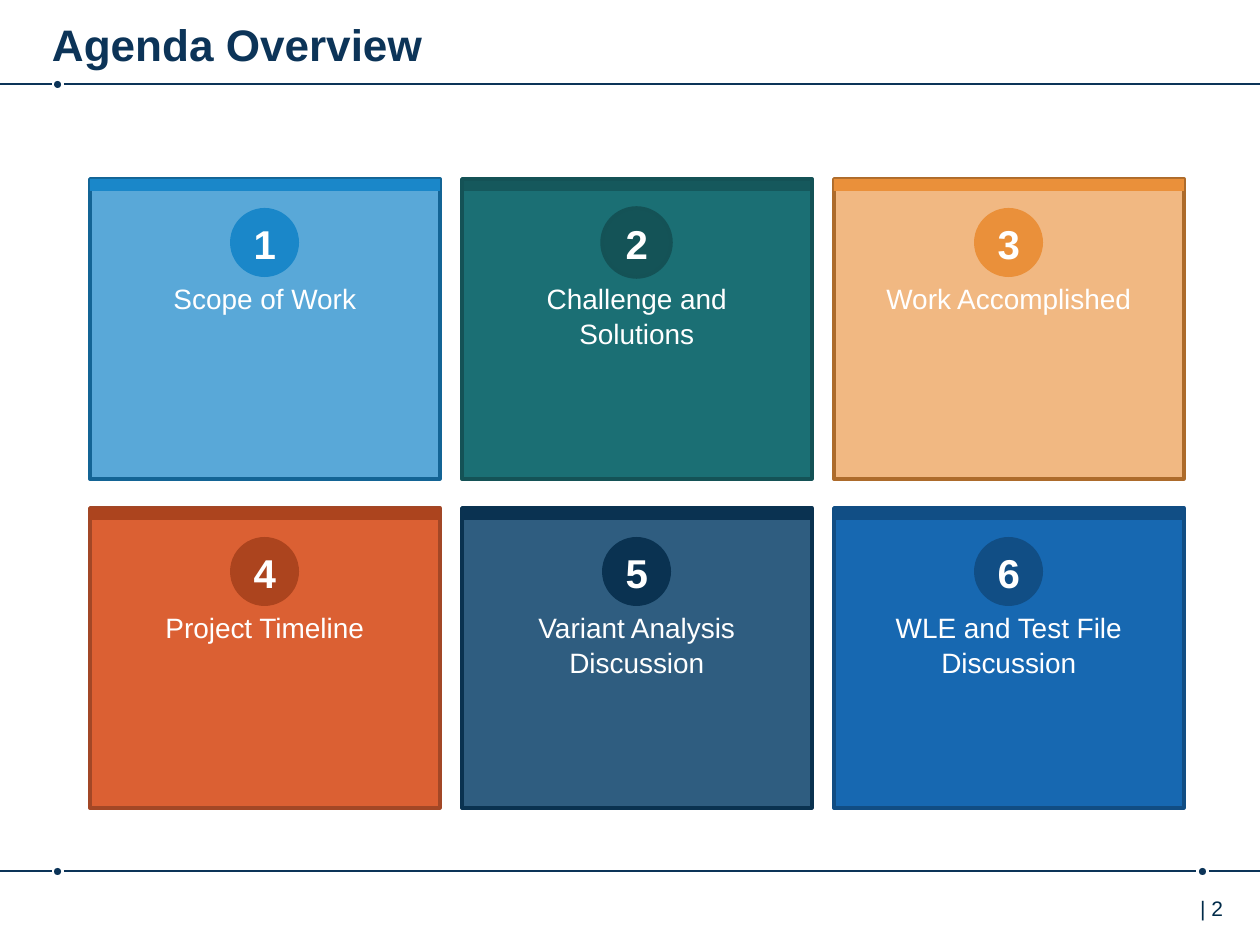
from dataclasses import dataclass
from typing import Any

from lxml.etree import SubElement
from pptx import Presentation
from pptx.dml.color import RGBColor
from pptx.enum.shapes import MSO_CONNECTOR, MSO_SHAPE
from pptx.enum.text import MSO_ANCHOR, PP_ALIGN as Align
from pptx.oxml.ns import qn
from pptx.util import Emu, Pt

EMU_PER_INCH = 914400
PX_PER_INCH = 126

WHITE = RGBColor(0xFF, 0xFF, 0xFF)
NAVY = RGBColor(0x0C, 0x34, 0x58)
PAGE_INK = RGBColor(0x00, 0x2B, 0x49)
SKY = RGBColor(0x1A, 0x87, 0xC9)
SKY_EDGE = RGBColor(0x13, 0x64, 0x95)
TEAL = RGBColor(0x1B, 0x6F, 0x74)
TEAL_DARK = RGBColor(0x14, 0x53, 0x57)
TEAL_EDGE = RGBColor(0x14, 0x52, 0x56)
ORANGE = RGBColor(0xEA, 0x90, 0x3A)
ORANGE_EDGE = RGBColor(0xAD, 0x6B, 0x2B)
RUST = RGBColor(0xDB, 0x60, 0x33)
RUST_DARK = RGBColor(0xAC, 0x44, 0x1E)
RUST_EDGE = RGBColor(0xA2, 0x47, 0x26)
SLATE = RGBColor(0x0D, 0x43, 0x6C)
SLATE_DARK = RGBColor(0x0A, 0x32, 0x51)
SLATE_EDGE = RGBColor(0x0A, 0x32, 0x50)
BLUE = RGBColor(0x17, 0x68, 0xB1)
BLUE_DARK = RGBColor(0x11, 0x4E, 0x85)
BLUE_EDGE = RGBColor(0x11, 0x4D, 0x83)

CARD_LEFT, CARD_TOP = 90, 179
CARD_WIDTH, CARD_HEIGHT = 350, 300
COLUMN_STEP, ROW_STEP = 372, 329
COLUMNS = 3
BAR_HEIGHT = 12
BADGE_SIZE = 69
LABEL_WIDTH = 286
DOT_SIZE = 7


def px(value):
    return Emu(round(value * EMU_PER_INCH / PX_PER_INCH))


@dataclass
class Card:
    label: str
    fill: RGBColor
    accent: RGBColor
    edge: RGBColor
    opacity: int = 100
    bar_opacity: int = 100
    badge_edge: Any = None


CARDS = [
    Card("Scope of Work", SKY, SKY, SKY_EDGE, opacity=72),
    Card("Challenge and Solutions", TEAL, TEAL_DARK, TEAL_EDGE,
         bar_opacity=80, badge_edge=TEAL_EDGE),
    Card("Work Accomplished", ORANGE, ORANGE, ORANGE_EDGE, opacity=63),
    Card("Project Timeline", RUST, RUST_DARK, RUST_EDGE),
    Card("Variant Analysis Discussion", SLATE, SLATE_DARK, SLATE_EDGE, opacity=86),
    Card("WLE and Test File Discussion", BLUE, BLUE_DARK, BLUE_EDGE),
]


@dataclass
class SlideBuilder:
    slide: Any
    font: str = "Arial"
    rule_color: RGBColor = NAVY

    def shape(self, kind, left, top, width, height, fill, opacity=100, edge=None):
        shape = self.slide.shapes.add_shape(kind, px(left), px(top), px(width), px(height))
        shape.shadow.inherit = False
        shape.fill.solid()
        shape.fill.fore_color.rgb = fill
        if opacity < 100:
            color = shape.fill._xPr.find(qn("a:solidFill"))[0]
            SubElement(color, qn("a:alpha"), val=str(opacity * 1000))
        if edge is None:
            shape.line.fill.background()
        else:
            shape.line.color.rgb = edge
            shape.line.width = Pt(2)
        return shape

    def text(self, text, left, top, width, height, *, size, color=WHITE, bold=False,
             align=Align.CENTER, inset_left=12, inset_top=6, spacing=1.0):
        box = self.slide.shapes.add_textbox(px(left), px(top), px(width), px(height))
        frame = box.text_frame
        frame.word_wrap = True
        frame.vertical_anchor = MSO_ANCHOR.TOP
        frame.margin_left, frame.margin_top = px(inset_left), px(inset_top)
        paragraph = frame.paragraphs[0]
        paragraph.alignment = align
        paragraph.line_spacing = spacing
        run = paragraph.add_run()
        run.text = text
        run.font.name = self.font
        run.font.size = Pt(size)
        run.font.bold = bold
        run.font.color.rgb = color
        return box

    def rule(self, start, end, y):
        line = self.slide.shapes.add_connector(
            MSO_CONNECTOR.STRAIGHT, px(start), px(y), px(end), px(y))
        line.line.color.rgb = self.rule_color
        line.line.width = Pt(1)
        SubElement(line._element.spPr, qn("a:effectLst"))

    def dotted_rule(self, y, segments, dots):
        for start, end in segments:
            self.rule(start, end, y)
        for left in dots:
            self.shape(MSO_SHAPE.OVAL, left, y - 3, DOT_SIZE, DOT_SIZE, self.rule_color)

    def card(self, index, card):
        row, column = divmod(index, COLUMNS)
        left = CARD_LEFT + column * COLUMN_STEP
        top = CARD_TOP + row * ROW_STEP
        badge_left = left + (CARD_WIDTH - BADGE_SIZE) // 2
        label_left = left + (CARD_WIDTH - LABEL_WIDTH) // 2
        self.shape(MSO_SHAPE.RECTANGLE, left, top, CARD_WIDTH, CARD_HEIGHT,
                   card.fill, card.opacity, card.edge)
        self.shape(MSO_SHAPE.RECTANGLE, left, top, CARD_WIDTH, BAR_HEIGHT,
                   card.accent, card.bar_opacity)
        self.shape(MSO_SHAPE.OVAL, badge_left, top + 29, BADGE_SIZE, BADGE_SIZE,
                   card.accent, edge=card.badge_edge)
        self.text(card.label, label_left, top + 94, LABEL_WIDTH, 149,
                  size=16, inset_top=7, spacing=1.04)
        self.text(str(index + 1), left, top + 30, CARD_WIDTH, 62,
                  size=23, bold=True, inset_top=10)


def main():
    presentation = Presentation()
    presentation.slide_width, presentation.slide_height = px(1260), px(945)
    builder = SlideBuilder(presentation.slides.add_slide(presentation.slide_layouts[6]))
    builder.dotted_rule(84, [(0, 52), (64, 1260)], [54])
    builder.dotted_rule(871, [(0, 52), (64, 1196), (1209, 1260)], [54, 1199])
    builder.text("| 2", 1170, 888, 110, 50, size=12, color=PAGE_INK,
                 align=Align.LEFT, inset_left=30, inset_top=8)
    for index, card in enumerate(CARDS):
        builder.card(index, card)
    builder.text("Agenda Overview", 52, 6, 1104, 62, size=25.2, color=NAVY, bold=True,
                 align=Align.LEFT, inset_left=0, inset_top=11)
    presentation.save("out.pptx")


if __name__ == "__main__":
    main()
